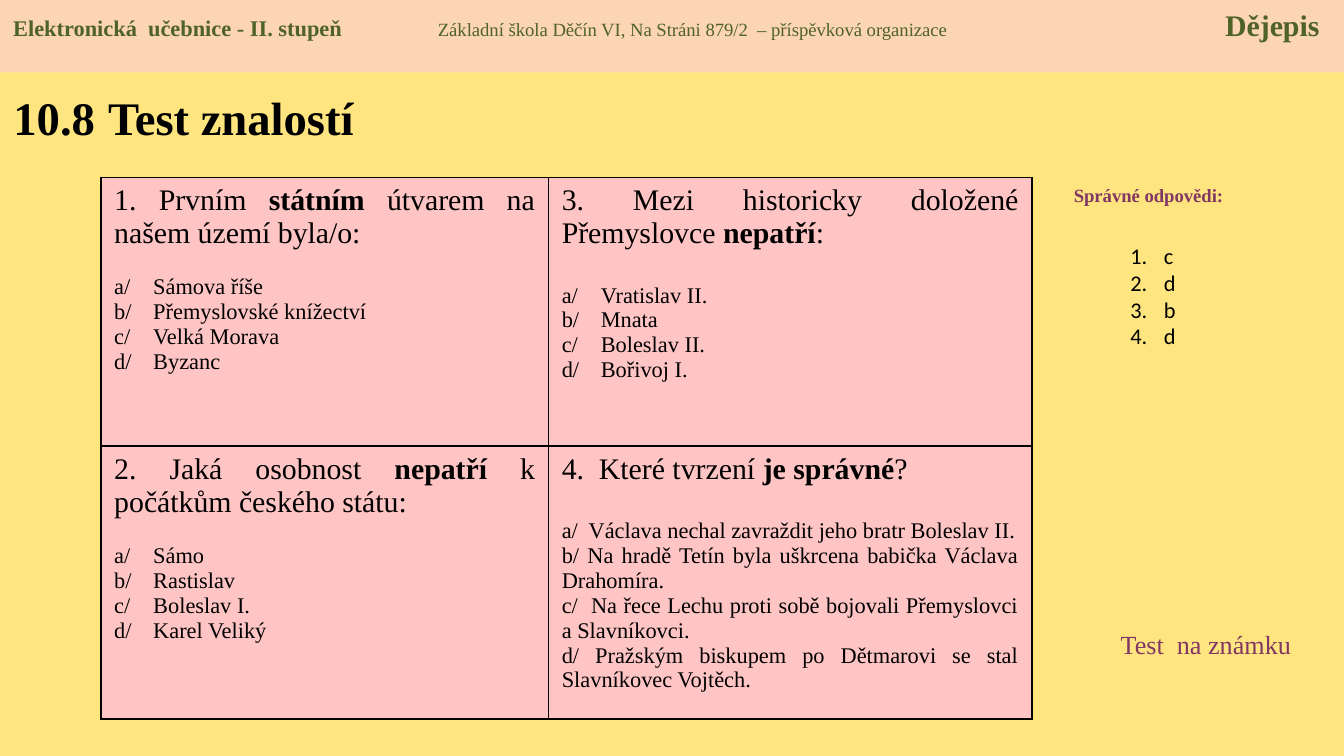
import dataclasses
import typing

import lxml.etree
import pptx
import pptx.dml.color
import pptx.enum.shapes
import pptx.enum.text
import pptx.oxml.ns
import pptx.util

Inches = pptx.util.Inches
Align = pptx.enum.text.PP_ALIGN
SERIF = "Times New Roman"
COLORS = {
    "background": "FFE57F",
    "header": "FCD5B5",
    "cell": "FFC5C5",
    "green": "4F6228",
    "purple": "813763",
    "black": "000000",
}
OPTION_INDENT = 0.29


@dataclasses.dataclass(frozen=True)
class Span:
    text: str
    size: float
    bold: bool = False
    color: str = "black"


@dataclasses.dataclass(frozen=True)
class Question:
    before: str
    stress: str
    after: str
    options: tuple[str, ...]
    gap: float


@dataclasses.dataclass(frozen=True)
class Label:
    left: float
    top: float
    width: float
    height: float
    span: Span
    align: typing.Any = Align.LEFT


QUESTIONS = (
    (
        Question("1. Prvním ", "státním ", "útvarem na našem území byla/o:",
                 ("a/\tSámova říše", "b/\tPřemyslovské knížectví",
                  "c/\tVelká Morava", "d/\tByzanc"), 13),
        Question("3. Mezi historicky doložené Přemyslovce ", "nepatří", ":",
                 ("a/\tVratislav II.", "b/\tMnata",
                  "c/\tBoleslav II.", "d/\tBořivoj I."), 17.5),
    ),
    (
        Question("2. Jaká osobnost ", "nepatří ", "k počátkům českého státu:",
                 ("a/\tSámo", "b/\tRastislav",
                  "c/\tBoleslav I.", "d/\tKarel Veliký"), 13),
        Question("4.  Které tvrzení ", "je správné", "?",
                 ("a/  Václava nechal zavraždit jeho bratr Boleslav II.",
                  "b/ Na hradě Tetín byla uškrcena babička Václava Drahomíra.",
                  "c/  Na řece Lechu proti sobě bojovali Přemyslovci a Slavníkovci.",
                  "d/ Pražským biskupem po Dětmarovi se stal Slavníkovec Vojtěch."), 17.5),
    ),
)
LABELS = (
    Label(7.76, 1.32, 1.57, 0.27,
          Span("Správné odpovědi:", 10, True, "purple"), Align.CENTER),
    Label(8.24, 4.63, 1.57, 0.34, Span("Test  na známku", 14, color="purple")),
)
HEADER = (
    Span("Elektronická  učebnice - II. stupeň\t", 12, True, "green"),
    Span("Základní škola Děčín VI, Na Stráni 879/2  – příspěvková organizace\t",
         10, color="green"),
    Span("Dějepis", 16, True, "green"),
)
TITLE = (Span("10.8", 25, True), Span(" ", 28, True), Span("Test znalostí", 25, True))
ANSWERS = "c\nd\nb\nd"


def rgb(name: str) -> pptx.dml.color.RGBColor:
    return pptx.dml.color.RGBColor.from_string(COLORS[name])


def add_element(parent, tag: str, **attributes: str):
    return lxml.etree.SubElement(parent, pptx.oxml.ns.qn(tag), attributes)


def write_spans(para, spans: typing.Iterable[Span]) -> None:
    for span in spans:
        run = para.add_run()
        run.text = span.text
        run.font.name = SERIF
        run.font.size = pptx.util.Pt(span.size)
        run.font.bold = span.bold
        run.font.color.rgb = rgb(span.color)


def set_hanging(para, indent: float) -> None:
    properties = para._p.get_or_add_pPr()
    properties.set("marL", str(Inches(indent)))
    properties.set("indent", str(-Inches(indent)))


def place(shape, left: float, top: float, width: float, height: float) -> None:
    shape.left, shape.top = Inches(left), Inches(top)
    shape.width, shape.height = Inches(width), Inches(height)


def add_header(slide) -> None:
    bar = slide.shapes.add_shape(pptx.enum.shapes.MSO_SHAPE.RECTANGLE,
                                 0, 0, Inches(10), Inches(0.54))
    bar.shadow.inherit = False
    bar.fill.solid()
    bar.fill.fore_color.rgb = rgb("header")
    bar.line.fill.background()
    bar.text_frame.vertical_anchor = pptx.enum.text.MSO_ANCHOR.TOP
    para = bar.text_frame.paragraphs[0]
    para.alignment = Align.LEFT
    tabs = add_element(para._p.get_or_add_pPr(), "a:tabLst")
    for position, align in ((3.16, "l"), (9.72, "r")):
        add_element(tabs, "a:tab", pos=str(Inches(position)), algn=align)
    write_spans(para, HEADER)


def add_title(slide) -> None:
    title = slide.shapes.title
    place(title, 0, 0.53, 3.62, 0.65)
    frame = title.text_frame
    frame.auto_size = pptx.enum.text.MSO_AUTO_SIZE.NONE
    frame.vertical_anchor = pptx.enum.text.MSO_ANCHOR.MIDDLE
    frame.paragraphs[0].alignment = Align.LEFT
    write_spans(frame.paragraphs[0], TITLE)


def add_label(slide, label: Label) -> None:
    box = slide.shapes.add_textbox(Inches(label.left), Inches(label.top),
                                   Inches(label.width), Inches(label.height))
    box.text_frame.word_wrap = True
    para = box.text_frame.paragraphs[0]
    para.alignment = label.align
    write_spans(para, (label.span,))


def add_answers(slide) -> None:
    box = slide.placeholders[1]
    place(box, 8.31, 1.75, 0.55, 1.11)
    frame = box.text_frame
    frame.auto_size = pptx.enum.text.MSO_AUTO_SIZE.NONE
    frame.text = ANSWERS
    for para in frame.paragraphs:
        para.space_before = pptx.util.Pt(0)
        set_hanging(para, 0.25)
        add_element(para._p.get_or_add_pPr(), "a:buFont", typeface="+mj-lt")
        add_element(para._p.get_or_add_pPr(), "a:buAutoNum", type="arabicPeriod")
        para.font.size = pptx.util.Pt(12)
        for run in para.runs:
            run.font.name = "Calibri"
            run.font.size = pptx.util.Pt(12)
            run.font.color.rgb = rgb("black")


def fill_cell(cell, question: Question) -> None:
    properties = cell._tc.get_or_add_tcPr()
    for side in ("a:lnL", "a:lnR", "a:lnT", "a:lnB"):
        line = add_element(properties, side, w=str(pptx.util.Pt(1)))
        add_element(add_element(line, "a:solidFill"), "a:srgbClr", val=COLORS["black"])
    cell.fill.solid()
    cell.fill.fore_color.rgb = rgb("cell")
    heading = cell.text_frame.paragraphs[0]
    heading.alignment = Align.JUSTIFY
    write_spans(heading, (Span(question.before, 16), Span(question.stress, 16, True),
                          Span(question.after, 16)))
    for index, option in enumerate(question.options):
        para = cell.text_frame.add_paragraph()
        para.alignment = Align.JUSTIFY
        if index == 0:
            para.space_before = pptx.util.Pt(question.gap)
        if "\t" in option:
            set_hanging(para, OPTION_INDENT)
        write_spans(para, (Span(option, 12),))


def add_questions(slide) -> None:
    table = slide.shapes.add_table(2, 2, Inches(0.75), Inches(1.32),
                                   Inches(6.93), Inches(4.03)).table
    table.first_row = table.horz_banding = False
    for column, width in zip(table.columns, (3.33, 3.6)):
        column.width = Inches(width)
    for row, height, questions in zip(table.rows, (2, 2.03), QUESTIONS):
        row.height = Inches(height)
        for cell, question in zip(row.cells, questions):
            fill_cell(cell, question)


def main() -> None:
    deck = pptx.Presentation()
    deck.slide_width = Inches(10)
    deck.slide_height = deck.slide_width * 9 // 16
    slide = deck.slides.add_slide(deck.slide_layouts[1])
    slide.background.fill.solid()
    slide.background.fill.fore_color.rgb = rgb("background")
    add_title(slide)
    add_questions(slide)
    add_answers(slide)
    for label in LABELS:
        add_label(slide, label)
    add_header(slide)
    deck.save("out.pptx")


if __name__ == "__main__":
    main()
